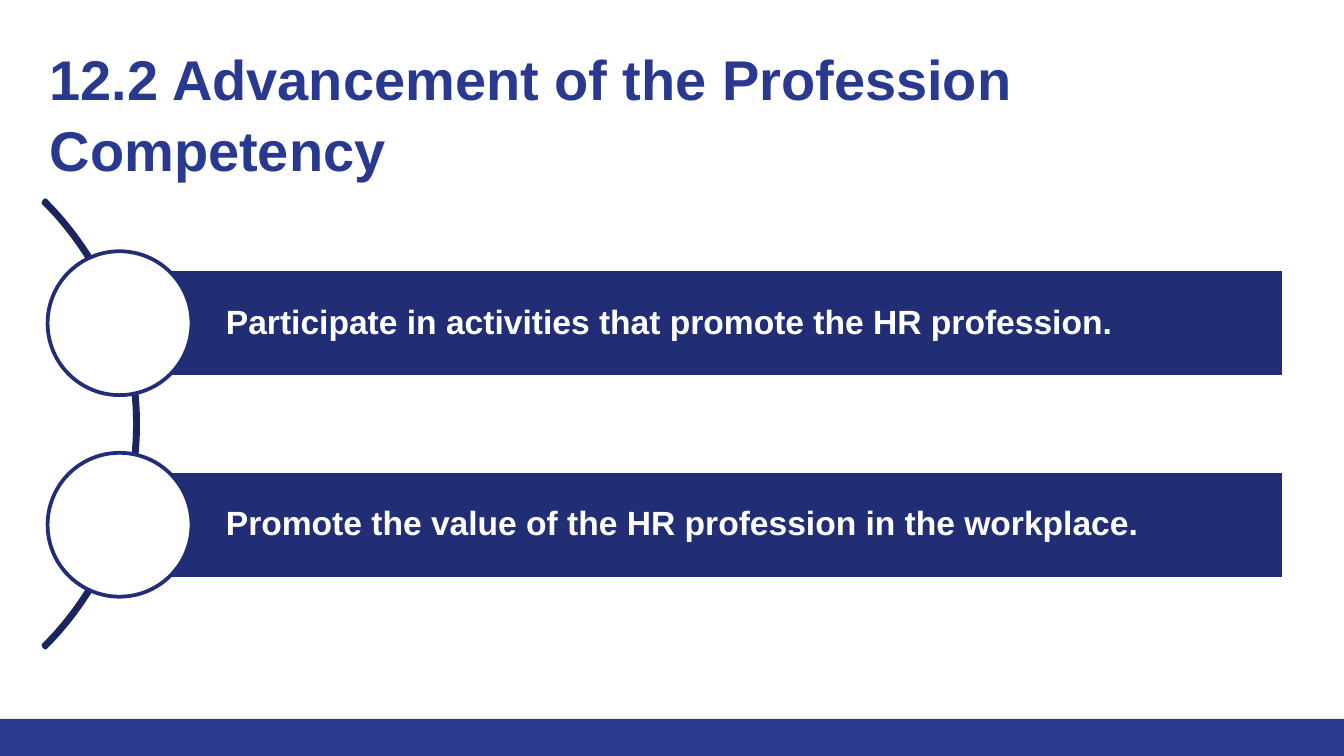
import pptx
import pptx.util
import pptx.dml.color
import pptx.enum.shapes
import pptx.enum.text

Cm = pptx.util.Cm
Pt = pptx.util.Pt
RGBColor = pptx.dml.color.RGBColor
SHAPE = pptx.enum.shapes.MSO_SHAPE
ANCHOR = pptx.enum.text.MSO_ANCHOR
ALIGN = pptx.enum.text.PP_ALIGN

BLUE = RGBColor(0x2A, 0x39, 0x90)
NAVY = RGBColor(0x21, 0x2D, 0x74)
DARK = RGBColor(0x1A, 0x24, 0x5D)
WHITE = RGBColor(0xFF, 0xFF, 0xFF)

WIDTH, HEIGHT = 25.4, 14.29
FOOT = 0.7
ARC = 11.96
DISC = 2.72
BAR = 2.04
LEFT, RIGHT = 2.26, 24.26
FIRST, STEP = 6.11, 3.81  # centre of the first row, distance to the next

GOALS = [
    "Participate in activities that promote the HR profession.",
    "Promote the value of the HR profession in the workplace.",
]


def add_shape(slide, kind, left, top, width, height, fill, line=None):
    shape = slide.shapes.add_shape(kind, Cm(left), Cm(top), Cm(width), Cm(height))
    shape.shadow.inherit = False
    shape.fill.solid()
    shape.fill.fore_color.rgb = fill
    if line is None:
        shape.line.fill.background()
    else:
        shape.line.color.rgb = line
        shape.line.width = Pt(2)
    return shape


def put_text(shape, text, size, color, anchor, inset, left, spacing):
    frame = shape.text_frame
    frame.word_wrap = True
    frame.vertical_anchor = anchor
    frame.margin_left = Cm(left)
    frame.margin_right = frame.margin_top = frame.margin_bottom = Cm(inset)
    para = frame.paragraphs[0]
    para.alignment = ALIGN.LEFT
    para.line_spacing = spacing
    run = para.add_run()
    run.text = text
    run.font.name = "Arial"
    run.font.size = Pt(size)
    run.font.bold = True
    run.font.color.rgb = color


def add_title(slide, text):
    box = slide.shapes.add_textbox(Cm(0.69), Cm(0.51), Cm(23.67), Cm(1.68))
    put_text(box, text, size=30, color=BLUE, anchor=ANCHOR.TOP,
             inset=0.25, left=0.25, spacing=1.06)


def add_arc(slide, middle):
    """Draw the thin quarter ring that runs behind the discs."""
    arc = add_shape(slide, SHAPE.BLOCK_ARC, -9.35, middle - ARC / 2,
                    ARC, ARC, DARK, DARK)
    for index, value in enumerate((189, 27, 0.005)):
        arc.adjustments[index] = value


def add_goal(slide, text, middle):
    bar = add_shape(slide, SHAPE.RECTANGLE, LEFT, middle - BAR / 2,
                    RIGHT - LEFT, BAR, NAVY, WHITE)
    put_text(bar, text, size=18, color=WHITE, anchor=ANCHOR.MIDDLE,
             inset=0.13, left=2.01, spacing=0.9)
    add_shape(slide, SHAPE.OVAL, LEFT - DISC / 2, middle - DISC / 2,
              DISC, DISC, WHITE, NAVY)


def main():
    deck = pptx.Presentation()
    deck.slide_width, deck.slide_height = Cm(WIDTH), Cm(HEIGHT)
    slide = deck.slides.add_slide(deck.slide_layouts[6])
    add_shape(slide, SHAPE.RECTANGLE, 0, HEIGHT - FOOT, WIDTH, FOOT, BLUE)
    add_title(slide, "12.2 Advancement of the Profession Competency")
    add_arc(slide, FIRST + STEP * (len(GOALS) - 1) / 2)
    for row, goal in enumerate(GOALS):
        add_goal(slide, goal, FIRST + STEP * row)
    deck.save("out.pptx")


if __name__ == "__main__":
    main()
